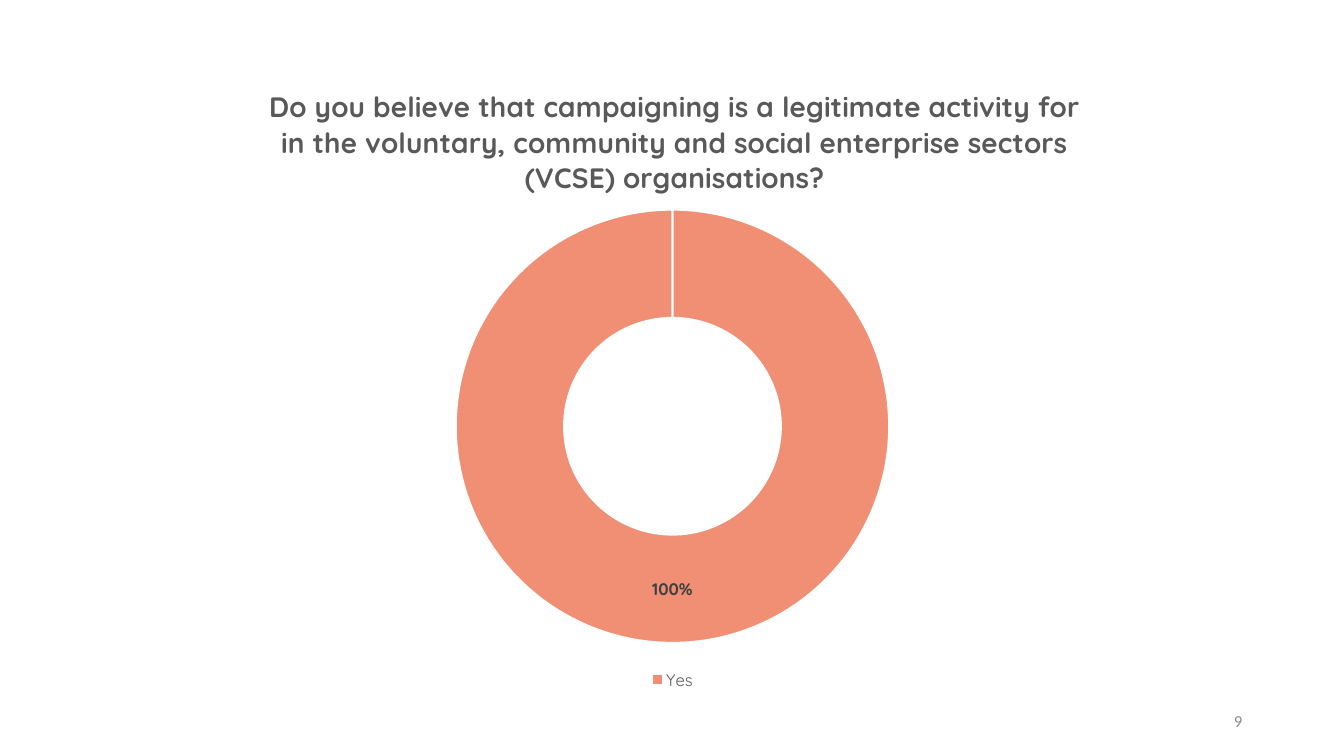
"""Build a slide with a doughnut chart of one survey answer."""
from lxml import etree
from pptx import Presentation
from pptx.chart.data import CategoryChartData
from pptx.dml.color import RGBColor
from pptx.enum.chart import XL_CHART_TYPE, XL_LEGEND_POSITION
from pptx.enum.text import MSO_ANCHOR, PP_ALIGN
from pptx.oxml.ns import qn
from pptx.util import Inches, Pt

TITLE = ("Do you believe that campaigning is a legitimate activity for "
         "in the voluntary, community and social enterprise sectors "
         "(VCSE) organisations?")
ANSWERS = {"Yes": 100}
PAGE = "9"
FRAME = (1.4, 0.53, 10.54, 6.36)
RING = (4.52, 2.08, 4.3, 4.3)
HEAD = (2.62, 0.8)

CORAL = RGBColor(0xF1, 0x8F, 0x74)
WHITE = RGBColor(0xFF, 0xFF, 0xFF)
BLACK = RGBColor(0, 0, 0)
DARK = RGBColor(0x40, 0x40, 0x40)
GREY = RGBColor(0x59, 0x59, 0x59)
PALE = RGBColor(0x8C, 0x8C, 0x8C)
DOUGHNUT = XL_CHART_TYPE.DOUGHNUT
BOTTOM = XL_LEGEND_POSITION.BOTTOM
MIDDLE = MSO_ANCHOR.MIDDLE
RIGHT = PP_ALIGN.RIGHT


def style(font, size, color, name="Quicksand", bold=False):
    """Set the look of a font."""
    font.size, font.name, font.bold = Pt(size), name, bold
    font.color.rgb = color


def place(layout, box, inner=False):
    """Fix a chart part at a box given in slide inches."""
    left, top, width, height = FRAME
    parts = [(box[0] - left) / width, (box[1] - top) / height]
    if len(box) == 4:
        parts += [box[2] / width, box[3] / height]
    for old in list(layout):
        layout.remove(old)
    manual = etree.SubElement(layout, qn("c:manualLayout"))
    rules = [("layoutTarget", "inner")] if inner else []
    rules += [("xMode", "edge"), ("yMode", "edge")]
    rules += [(key, f"{part:.4f}") for key, part in zip("xywh", parts)]
    for tag, value in rules:
        etree.SubElement(manual, qn(f"c:{tag}")).set("val", value)


def add_ring(slide):
    """Add the doughnut with its title, label and legend."""
    data = CategoryChartData()
    data.categories = list(ANSWERS)
    data.add_series("Series 1", list(ANSWERS.values()))
    box = [Inches(size) for size in FRAME]
    chart = slide.shapes.add_chart(DOUGHNUT, *box, data).chart
    style(chart.font, 10, BLACK, "Calibri")

    frame = chart.chart_title.text_frame
    frame.text = TITLE
    style(frame.paragraphs[0].runs[0].font, 20, GREY, bold=True)
    chart.chart_title.include_in_layout = False
    head = chart.chart_title._element
    place(head.get_or_add_layout() if hasattr(head, "get_or_add_layout")
          else head.find(qn("c:layout")), HEAD)

    chart.has_legend = True
    chart.legend.position = BOTTOM
    chart.legend.include_in_layout = False
    style(chart.legend.font, 12, GREY)

    plot = chart.plots[0]
    plot.vary_by_categories = True
    area = plot._element.getparent()
    layout = area.find(qn("c:layout"))
    if layout is None:
        layout = etree.Element(qn("c:layout"))
        area.insert(0, layout)
    place(layout, RING, inner=True)

    point = plot.series[0].points[0].format
    point.fill.solid()
    point.fill.fore_color.rgb = CORAL
    point.line.color.rgb = WHITE
    point.line.width = Pt(1.5)
    labels = plot.series[0].data_labels
    labels.show_value = False
    labels.show_percentage = True
    labels.number_format = "0%"
    labels.number_format_is_linked = False
    style(labels.font, 12, DARK, bold=True)


def add_page(slide):
    """Add the page number."""
    box = [Inches(size) for size in (9.42, 6.95, 3, 0.4)]
    frame = slide.shapes.add_textbox(*box).text_frame
    frame.word_wrap = True
    frame.vertical_anchor = MIDDLE
    frame.text = PAGE
    line = frame.paragraphs[0]
    line.alignment = RIGHT
    style(line.runs[0].font, 12, PALE, "Calibri")


def main():
    """Build and save the deck."""
    deck = Presentation()
    deck.slide_width, deck.slide_height = Inches(13.33), Inches(7.5)
    slide = deck.slides.add_slide(deck.slide_layouts[6])
    add_ring(slide)
    add_page(slide)
    deck.save("out.pptx")


if __name__ == "__main__":
    main()
